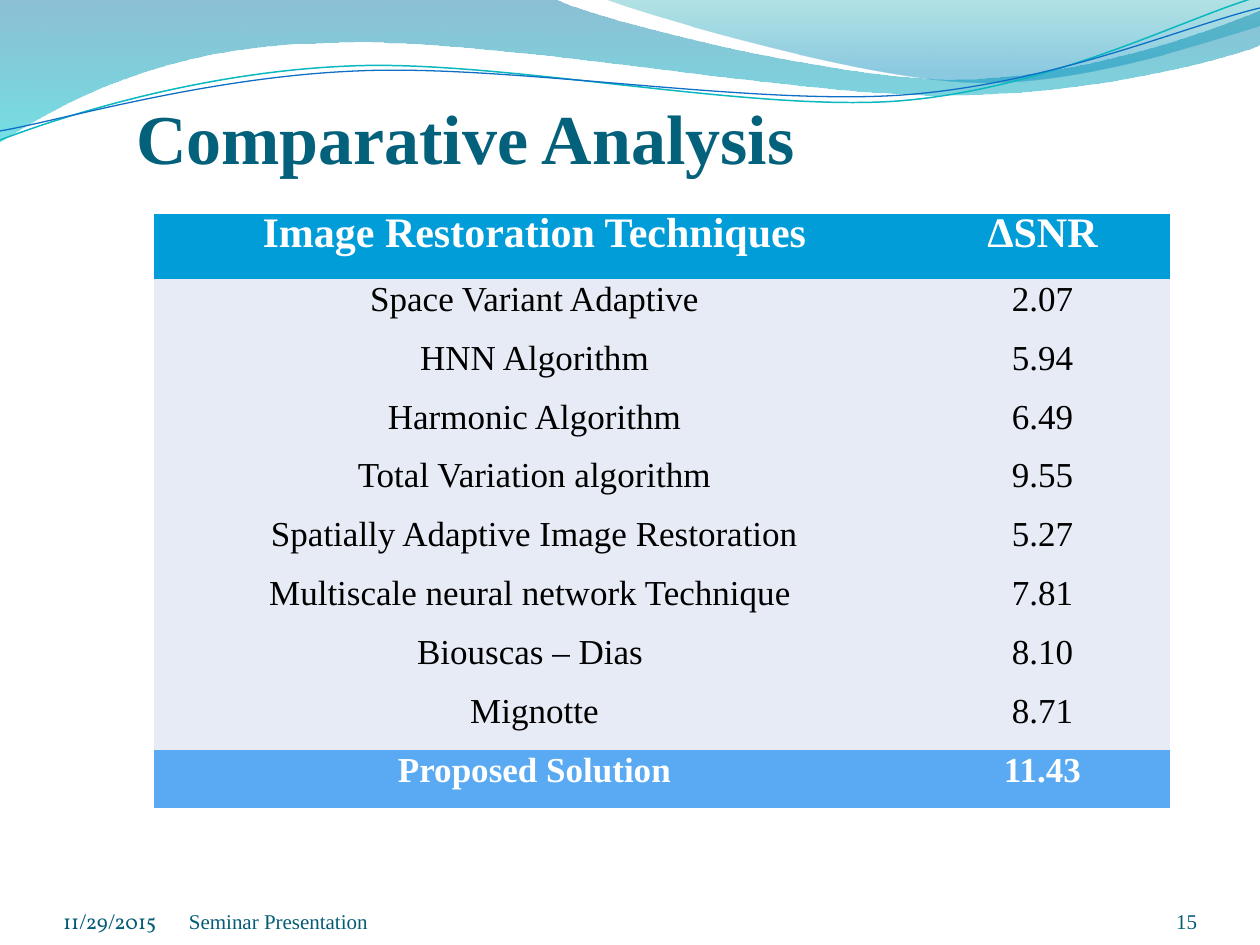
from lxml import etree
from pptx import Presentation
from pptx.dml.color import RGBColor
from pptx.enum.text import MSO_ANCHOR, PP_ALIGN
from pptx.oxml.ns import qn
from pptx.util import Pt

PX = 914400 / 126
LEFT, MID, RIGHT = PP_ALIGN.LEFT, PP_ALIGN.CENTER, PP_ALIGN.RIGHT
SERIF = "Times New Roman"
NO_STYLE = "{2D5ABB26-0587-4C30-8999-92F81FD0307C}"

COLOR = {
    "title": "04617B", "foot": "045D75", "white": "FFFFFF", "black": "000000",
    "head": "009DD9", "body": "E7EBF5", "best": "59AAF2",
    "deep": "0074A1", "aqua": "00C6CF", "teal": "00A1A9", "sky": "008BBF",
    "line1": "0AB8BF", "line2": "0F6FC6",
}

# A path starts at a point; each later part is one line end (2 numbers)
# or a cubic curve (6 numbers).
BANDS = [
    ([(0, 0), (554, -1), (600, 21, 837, 79, 955, 79),
      (1074, 79, 1207, 33, 1260, 11), (1261, 45),
      (1239, 55, 1096, 96, 940, 95), (784, 95, 481, 35, 324, 43),
      (163, 45, 58, 105, -1, 142), (0, 0)],
     [(0, "deep", 45), (1, "aqua", 55)]),
    ([(604, -1), (641, 14, 859, 78, 969, 82),
      (1079, 87, 1211, 40, 1260, 26), (1260, 0), (604, -1)],
     [(0, "teal", 30), (0.8, "sky", 45)]),
]
WAVES = [
    ([(0, 140), (60, 117, 199, 72, 349, 66), (498, 59, 747, 112, 898, 101),
      (1050, 89, 1182, 19, 1257, -3)], "line1", 0.85),
    ([(0, 131), (59, 121, 207, 77, 357, 71), (508, 64, 752, 106, 903, 95),
      (1053, 84, 1185, 26, 1260, 8)], "line2", 0.75),
]

TITLE = "Comparative Analysis"
ROWS = [
    ("Image Restoration Techniques", "ΔSNR"),
    ("Space Variant Adaptive", "2.07"),
    ("HNN Algorithm", "5.94"),
    ("Harmonic Algorithm", "6.49"),
    ("Total Variation algorithm", "9.55"),
    ("Spatially Adaptive Image Restoration", "5.27"),
    ("Multiscale neural network Technique ", "7.81"),
    ("Biouscas – Dias ", "8.10"),
    ("Mignotte", "8.71"),
    ("Proposed Solution", "11.43"),
]
COLS = (761, 255)
HEAD_H, ROW_H, INSET = 65, 58, 18.9
FOOT = [
    ("11/29/2015", (63, 884, 294, 50), LEFT, "Vollkorn"),
    ("Seminar Presentation", (189, 902, 935, 32), LEFT, SERIF),
    ("15", (1092, 884, 105, 50), RIGHT, SERIF),
]


def emu(*nums):
    return [round(n * PX) for n in nums]


def rgb(name):
    return RGBColor.from_string(COLOR[name])


def outline(slide, path, close):
    """Draw all points as lines, then join each curve's three into one."""
    pts = [emu(*part[i:i + 2]) for part in path
           for i in range(0, len(part), 2)]
    pen = slide.shapes.build_freeform(*pts[0])
    pen.add_line_segments(pts[1:], close=close)
    shape = pen.convert_to_shape()
    shape.shadow.inherit = False
    lines = list(shape._element.iter(qn("a:lnTo")))
    for part in path[1:]:
        count = len(part) // 2
        group, lines = lines[:count], lines[count:]
        if count == 3:
            first = group[0]
            first.tag = qn("a:cubicBezTo")
            for line in group[1:]:
                first.append(line[0])
                line.getparent().remove(line)
    return shape


def add_band(slide, path, stops):
    shape = outline(slide, path, True)
    shape.line.fill.background()
    fill = shape.fill
    fill.gradient()
    fill.gradient_angle = 270
    for stop, (pos, color, alpha) in zip(fill.gradient_stops, stops):
        stop.position = pos
        stop.color.rgb = rgb(color)
    tags = shape._element.spPr.iter(qn("a:srgbClr"))
    for tag, (pos, color, alpha) in zip(tags, stops):
        etree.SubElement(tag, qn("a:alpha")).set("val", str(alpha * 1000))


def add_wave(slide, path, color, width):
    shape = outline(slide, path, False)
    shape.fill.background()
    shape.line.color.rgb = rgb(color)
    shape.line.width = Pt(width)


def style(para, size, color, bold=False, face=SERIF, align=LEFT):
    para.alignment = align
    font = para.font
    font.size, font.bold, font.name = Pt(size), bold, face
    font.color.rgb = rgb(color)


def set_frame(frame, anchor, top=0):
    frame.word_wrap = True
    frame.vertical_anchor = anchor
    frame.margin_left = frame.margin_right = frame.margin_bottom = 0
    frame.margin_top = emu(top)[0]


def add_title(slide):
    title = slide.shapes.title
    title.left, title.top, title.width, title.height = emu(136, 63, 1071, 116)
    title.text_frame.text = TITLE
    set_frame(title.text_frame, MSO_ANCHOR.BOTTOM, 6)
    style(title.text_frame.paragraphs[0], 40, "title", True)


def add_scores(slide):
    last = len(ROWS) - 1
    box = emu(154, 214, sum(COLS), HEAD_H + last * ROW_H)
    table = slide.shapes.add_table(len(ROWS), len(COLS), *box).table
    table._tbl.tblPr.find(qn("a:tableStyleId")).text = NO_STYLE
    for col, width in zip(table.columns, emu(*COLS)):
        col.width = width
    looks = {0: (24, "white", True, "head"), last: (20, "white", True, "best")}
    for r, texts in enumerate(ROWS):
        table.rows[r].height = emu(ROW_H if r else HEAD_H)[0]
        size, color, bold, back = looks.get(r, (20, "black", False, "body"))
        for c, text in enumerate(texts):
            cell = table.cell(r, c)
            cell.text = text
            cell.fill.solid()
            cell.fill.fore_color.rgb = rgb(back)
            cell.vertical_anchor = MSO_ANCHOR.MIDDLE
            cell.margin_left = cell.margin_right = emu(INSET)[0]
            cell.margin_top = cell.margin_bottom = emu(INSET)[0]
            para = cell.text_frame.paragraphs[0]
            para.line_spacing = Pt(12)
            style(para, size, color, bold, align=MID)


def add_foot(slide, text, box, align, face):
    frame = slide.shapes.add_textbox(*emu(*box)).text_frame
    frame.text = text
    set_frame(frame, MSO_ANCHOR.BOTTOM)
    style(frame.paragraphs[0], 12, "foot", face=face, align=align)


def main():
    prs = Presentation()
    prs.slide_width, prs.slide_height = emu(1260, 945)
    slide = prs.slides.add_slide(prs.slide_layouts[5])
    for band in BANDS:
        add_band(slide, *band)
    for wave in WAVES:
        add_wave(slide, *wave)
    add_scores(slide)
    for item in FOOT:
        add_foot(slide, *item)
    add_title(slide)
    prs.save("out.pptx")


if __name__ == "__main__":
    main()
